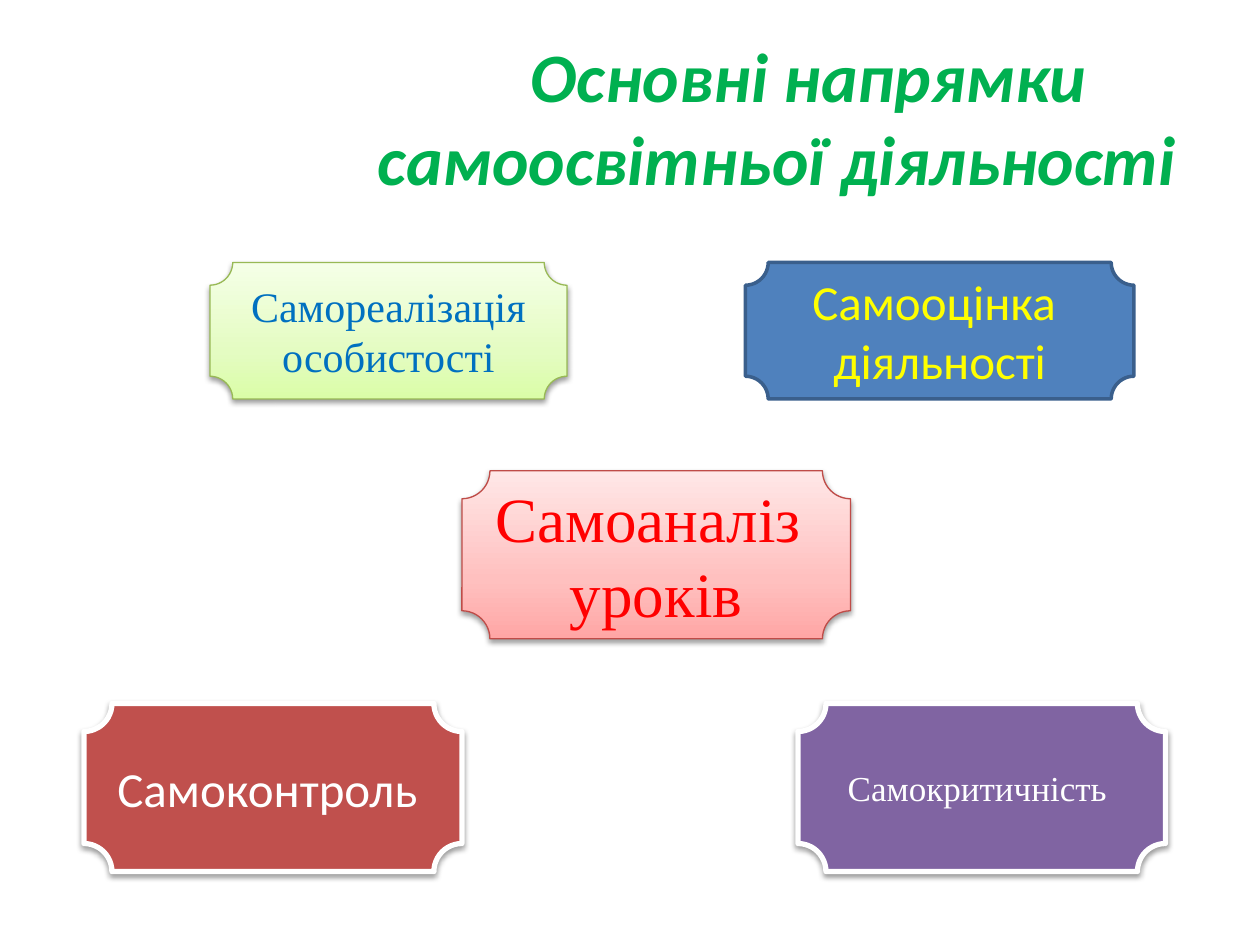
from lxml import etree
from pptx import Presentation
from pptx.dml.color import RGBColor
from pptx.enum.shapes import MSO_SHAPE
from pptx.enum.text import MSO_ANCHOR, MSO_AUTO_SIZE, PP_ALIGN
from pptx.oxml.ns import qn
from pptx.util import Pt

PLAQUE = MSO_SHAPE.PLAQUE
CENTER = PP_ALIGN.CENTER
MIDDLE = MSO_ANCHOR.MIDDLE
TIMES, CALIBRI = "Times New Roman", "Calibri"

# Title lines with their left indents
TITLE = [("Основні напрямки", 204), ("самоосвітньої діяльності", 168)]

GREEN = [(0, "DAFDA7"), (35, "E4FCC2"), (100, "F5FFE7")]
PINK = [(0, "FFA6A5"), (35, "FFC0BF"), (100, "FFE7E7")]

# lines, (left, top, width, height), fill, (line colour, width), shadow, (font, size, colour)
PLAQUES = [
    (["Самореалізація", "особистості"], (120, 150, 204, 78),
     GREEN, ("98B955", 0.75), True, (TIMES, 24, "0070C0")),
    (["Самооцінка ", "діяльності"], (426, 150, 222, 78),
     "4F81BD", ("3A5F8C", 2), False, (CALIBRI, 28, "FFFF00")),
    (["Самоаналіз ", "уроків"], (264, 269, 222, 96),
     PINK, ("BF4C48", 0.75), True, (TIMES, 36, "FF0000")),
    (["Самоконтроль "], (48, 402, 216, 96),
     "C0504D", ("FFFFFF", 3), True, (CALIBRI, 28, "FFFFFF")),
    (["Самокритичність "], (456, 402, 210, 96),
     "8064A2", ("FFFFFF", 3), True, (TIMES, 20, "FFFFFF")),
]


def rgb(color):
    return RGBColor.from_string(color)


def place(shape, box):
    shape.left, shape.top, shape.width, shape.height = map(Pt, box)


def write_lines(tf, lines, font, size, color):
    """Write one centred paragraph per line and return the runs."""
    runs = []
    for i, line in enumerate(lines):
        p = tf.add_paragraph() if i else tf.paragraphs[0]
        p.alignment = CENTER
        r = p.add_run()
        r.text = line
        r.font.name, r.font.size = font, Pt(size)
        r.font.color.rgb = rgb(color)
        runs.append(r)
    return runs


def add_color(parent, color):
    return etree.SubElement(parent, qn("a:srgbClr"), val=color)


def set_gradient(sp, stops):
    sp.fill.gradient()
    sp.fill.gradient_angle = 90
    stop_list = sp._element.spPr.find(".//" + qn("a:gsLst"))
    for old in list(stop_list):
        stop_list.remove(old)
    for percent, color in stops:
        add_color(etree.SubElement(stop_list, qn("a:gs"), pos=str(percent * 1000)), color)


def add_shadow(sp):
    effects = sp._element.spPr.find(qn("a:effectLst"))
    outer = etree.SubElement(effects, qn("a:outerShdw"), blurRad=str(Pt(3.1)),
                             dist=str(Pt(1.6)), dir="5400000", rotWithShape="0")
    etree.SubElement(add_color(outer, "000000"), qn("a:alpha"), val="38000")


def add_title(slide):
    title = slide.shapes.title
    place(title, (36, 21.6, 648, 90))
    tf = title.text_frame
    tf.auto_size = MSO_AUTO_SIZE.NONE
    tf.vertical_anchor = MIDDLE
    runs = write_lines(tf, [line for line, _ in TITLE], CALIBRI, 39.6, "00B050")
    for p, r, (_, indent) in zip(tf.paragraphs, runs, TITLE):
        p._p.get_or_add_pPr().set("marL", str(Pt(indent)))
        r.font.bold = r.font.italic = True


def add_plaque(slide, lines, box, fill, line, shadow, text_style):
    sp = slide.shapes.add_shape(PLAQUE, *map(Pt, box))
    if isinstance(fill, str):
        sp.fill.solid()
        sp.fill.fore_color.rgb = rgb(fill)
    else:
        set_gradient(sp, fill)
    color, width = line
    sp.line.color.rgb, sp.line.width = rgb(color), Pt(width)
    sp.shadow.inherit = False
    if shadow:
        add_shadow(sp)
    tf = sp.text_frame
    tf.word_wrap = True
    tf.vertical_anchor = MIDDLE
    write_lines(tf, lines, *text_style)


def main():
    prs = Presentation()
    prs.slide_width, prs.slide_height = Pt(720), Pt(540)
    slide = prs.slides.add_slide(prs.slide_layouts[5])
    add_title(slide)
    for plaque in PLAQUES:
        add_plaque(slide, *plaque)
    prs.save("out.pptx")


if __name__ == "__main__":
    main()
